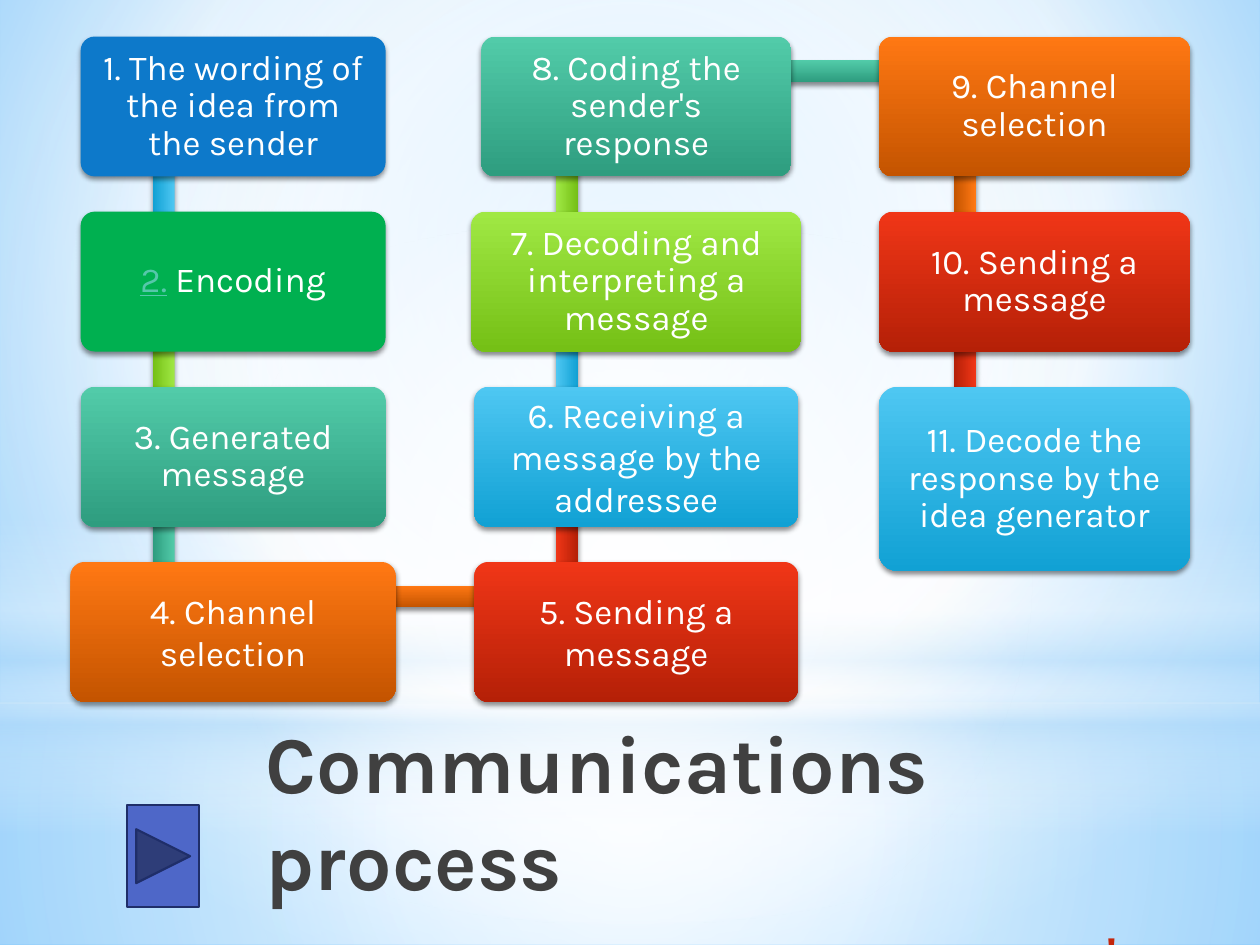
from dataclasses import dataclass
from typing import Optional

from lxml import etree
from pptx import Presentation
from pptx.dml.color import RGBColor
from pptx.enum.shapes import MSO_SHAPE
from pptx.enum.text import MSO_ANCHOR, MSO_AUTO_SIZE, PP_ALIGN
from pptx.oxml.ns import qn
from pptx.util import Inches, Pt

RECT, OVAL = MSO_SHAPE.RECTANGLE, MSO_SHAPE.OVAL
ROUND, NEXT = MSO_SHAPE.ROUNDED_RECTANGLE, MSO_SHAPE.ACTION_BUTTON_FORWARD_OR_NEXT
MID, TOP = MSO_ANCHOR.MIDDLE, MSO_ANCHOR.TOP
LEFT, MIDDLE, RIGHT = PP_ALIGN.LEFT, PP_ALIGN.CENTER, PP_ALIGN.RIGHT
FIXED = MSO_AUTO_SIZE.NONE

WIDE, HIGH = 10, 7.5
FONT = "Karla"
COLS = (1.85, 5.05, 8.21)
FIRST, PITCH, TALL = 0.29, 1.39, 1.11
BAR, SHIFT, DROP, REACH = 0.17, 0.55, 0.19, 3.2
TURNS = {"down": 90, "up": 270}

HEX = {
    "white": "FFFFFF", "ink": "404040", "star": "C3260C", "link": "56C7AA",
    "pale": "B4DCFA", "dawn": "9ED5FF", "dusk": "5BB9FF",
    "key": "4E67C8", "rim": "1F2E69", "shade": "000000",
    "blue": "0D79CA", "green": "00B050",
    "sky": "4EC7F2", "sky2": "11A1D4", "lime": "A0E844", "lime2": "75C016",
    "teal": "52CBA9", "teal2": "2E9D7F", "rust": "FF7813", "rust2": "C45400",
    "red": "F03617", "red2": "B52007",
}


@dataclass
class Step:
    words: str
    col: int
    row: int
    width: float
    hue: str
    way: str = ""
    bond: str = ""
    space: float = 0.9
    height: float = TALL


@dataclass
class Glow:
    kind: int
    top: float
    height: float
    stops: tuple
    focus: Optional[tuple] = (50, 50, 50, 50)


STEPS = (
    Step("1. The wording of the idea from the sender", 0, 0, 2.42, "blue", "down", "sky"),
    Step("2. Encoding", 0, 1, 2.42, "green", "down", "lime"),
    Step("3. Generated message", 0, 2, 2.42, "teal", "down"),
    Step("4. Channel selection", 0, 3, 2.58, "rust", "right", space=1),
    Step("5. Sending a message", 1, 3, 2.57, "red", "up", space=1),
    Step("6. Receiving a message by the addressee", 1, 2, 2.57, "sky", "up", space=1),
    Step("7. Decoding and interpreting a message", 1, 1, 2.62, "lime", "up"),
    Step("8. Coding the sender's response", 1, 0, 2.46, "teal", "right"),
    Step("9. Channel selection", 2, 0, 2.47, "rust", "down"),
    Step("10. Sending a message", 2, 1, 2.47, "red", "down"),
    Step("11. Decode the response by the idea generator", 2, 2, 2.47, "sky", height=1.46),
)

GLOWS = (
    Glow(RECT, 5.58, 1.92, ((0, "white", 91), (37, "white", 76), (100, "pale", 79))),
    Glow(RECT, 0, 5.58, ((0, "white", 89), (48, "white", 62), (100, "pale", 79))),
    Glow(RECT, 4.12, 2.5, ((0, "white", 0), (29, "white", 30), (45, "pale", 40),
                           (55, "white", 26), (65, "pale", 60), (100, "white", 0)), None),
    Glow(OVAL, 1.75, 5.58, ((0, "white", 100), (56, "white", 0))),
)


def paint(fill, hue: str) -> None:
    fill.solid()
    fill.fore_color.rgb = RGBColor.from_string(HEX[hue])


def blend(fill, root, stops: tuple, focus: Optional[tuple] = None) -> None:
    paint(fill, "white")
    old = root.find(".//" + qn("a:solidFill"))
    grad = etree.Element(qn("a:gradFill"), rotWithShape="1")
    marks = etree.SubElement(grad, qn("a:gsLst"))
    for place, hue, alpha in stops:
        mark = etree.SubElement(marks, qn("a:gs"), pos=str(place * 1000))
        tint = etree.SubElement(mark, qn("a:srgbClr"), val=HEX[hue])
        etree.SubElement(tint, qn("a:alpha"), val=str(alpha * 1000))
    if focus:
        course = etree.SubElement(grad, qn("a:path"), {"path": "circle"})
        sides = {side: str(n * 1000) for side, n in zip("ltrb", focus)}
        etree.SubElement(course, qn("a:fillToRect"), sides)
    else:
        etree.SubElement(grad, qn("a:lin"), ang="5400000", scaled="0")
    old.getparent().replace(old, grad)


def block(slide, kind: int, left: float, top: float, width: float, height: float):
    shape = slide.shapes.add_shape(kind, *map(Inches, (left, top, width, height)))
    shape.shadow.inherit = False
    shape.line.fill.background()
    return shape


def coat(shape, hue: str) -> None:
    props = shape._element.spPr
    if hue + "2" in HEX:
        blend(shape.fill, props, ((0, hue, 100), (100, hue + "2", 100)))
    else:
        paint(shape.fill, hue)
    shade = etree.SubElement(props.find(qn("a:effectLst")), qn("a:outerShdw"),
                             blurRad=str(Pt(3.1)), dist=str(Pt(1.8)),
                             dir="5400000", rotWithShape="0")
    tint = etree.SubElement(shade, qn("a:srgbClr"), val=HEX["shade"])
    etree.SubElement(tint, qn("a:alpha"), val="45000")


def style(run, size: float, hue: str, bold: bool = False) -> None:
    run.font.name = FONT
    run.font.size = Pt(size)
    run.font.bold = bold
    run.font.color.rgb = RGBColor.from_string(HEX[hue])


def bond(slide, step: Step) -> None:
    axis, top = COLS[step.col] - SHIFT, FIRST + step.row * PITCH
    if step.way == "right":
        bar = block(slide, RECT, axis, top + DROP, REACH, BAR)
    else:
        gap = top + (TALL + PITCH) / 2 - (PITCH - TALL)
        if step.way == "up":
            gap -= PITCH
        bar = block(slide, RECT, axis - PITCH / 2, gap - BAR / 2, PITCH, BAR)
        bar.rotation = TURNS[step.way]
    coat(bar, step.bond or step.hue)


def card(slide, step: Step) -> None:
    box = block(slide, ROUND, COLS[step.col] - step.width / 2,
                FIRST + step.row * PITCH, step.width, step.height)
    box.adjustments[0] = 0.1
    coat(box, step.hue)
    frame = box.text_frame
    frame.word_wrap = True
    frame.vertical_anchor = MID
    frame.margin_left = frame.margin_right = Inches(0.11)
    frame.margin_top = frame.margin_bottom = Inches(0.11)
    para = frame.paragraphs[0]
    para.alignment = MIDDLE
    para.line_spacing = step.space
    if step.hue == "green":
        mark, rest = step.words.split(" ")
        para.text = mark
        para.add_run().text = " " + rest
    else:
        para.text = step.words
    for run in para.runs:
        style(run, 20, "white")
    if step.hue == "green":
        style(para.runs[0], 20, "link")
        para.runs[0].font.underline = True


def head(slide) -> None:
    title = slide.shapes.title
    title.left, title.top, title.width, title.height = map(Inches, (2.01, 5.56, 7.08, 1.25))
    slide.shapes._spTree.append(title._element)
    frame = title.text_frame
    frame.auto_size = FIXED
    frame.word_wrap = True
    frame.vertical_anchor = TOP
    frame.margin_top = Inches(0.1)
    frame.text = "Communications process\n*"
    looks = ((LEFT, 46, "ink", True), (RIGHT, 59, "star", False))
    for para, (side, size, hue, bold) in zip(frame.paragraphs, looks):
        para.alignment = side
        para.space_before = Pt(0)
        style(para.runs[0], size, hue, bold)


def main() -> None:
    deck = Presentation()
    deck.slide_width, deck.slide_height = Inches(WIDE), Inches(HIGH)
    slide = deck.slides.add_slide(deck.slide_layouts[5])
    blend(slide.background.fill, slide._element.cSld,
          ((0, "dawn", 100), (60, "white", 100), (100, "dusk", 100)), (20, 10, 20, 60))
    for glow in GLOWS:
        shape = block(slide, glow.kind, 0, glow.top, WIDE, glow.height)
        blend(shape.fill, shape._element.spPr, glow.stops, glow.focus)
    head(slide)
    for step in STEPS:
        if step.way:
            bond(slide, step)
        card(slide, step)
    key = block(slide, NEXT, 1.01, 6.39, 0.57, 0.81)
    paint(key.fill, "key")
    paint(key.line.fill, "rim")
    key.line.width = Pt(1.25)
    deck.save("out.pptx")


if __name__ == "__main__":
    main()
